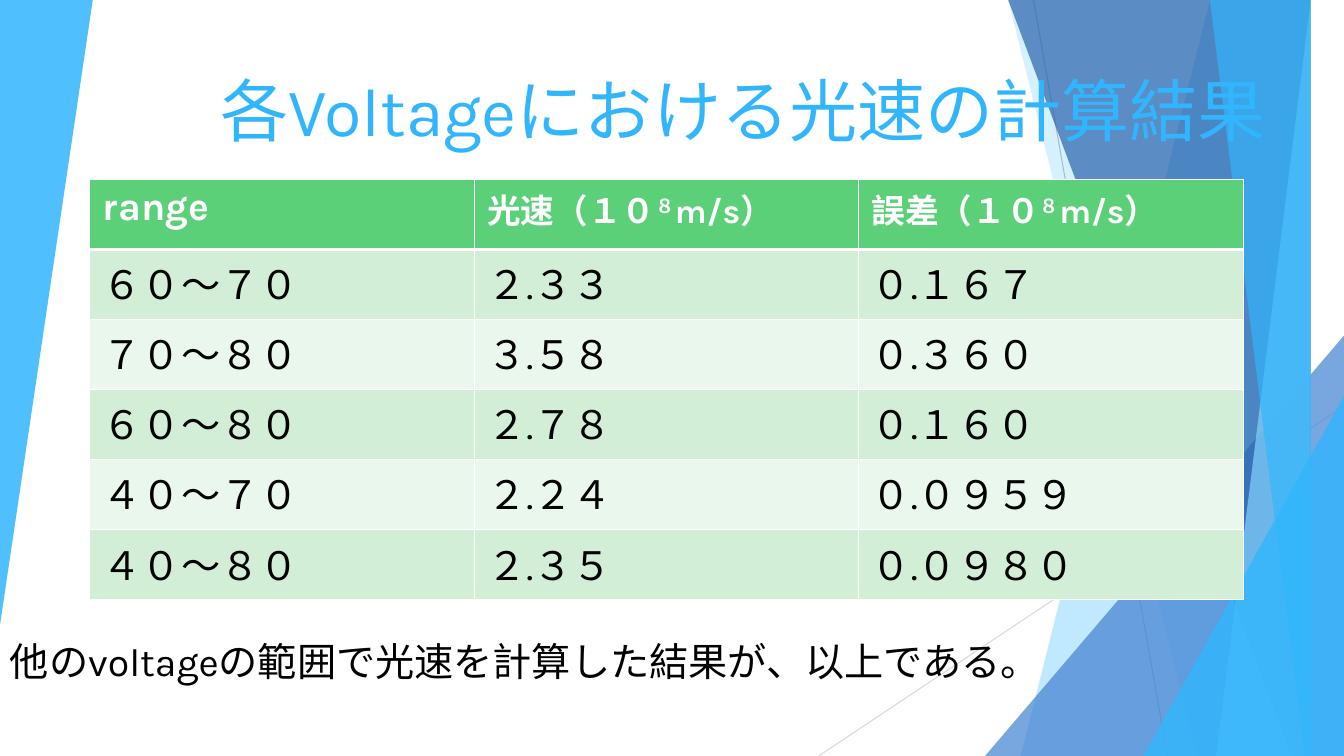
from lxml import etree
from pptx import Presentation
from pptx.dml.color import RGBColor
from pptx.enum.shapes import MSO_CONNECTOR, MSO_SHAPE
from pptx.enum.text import MSO_ANCHOR, PP_ALIGN
from pptx.oxml.ns import qn
from pptx.util import Inches, Pt

STRAIGHT = MSO_CONNECTOR.STRAIGHT
TRIANGLE = MSO_SHAPE.ISOSCELES_TRIANGLE
BOTTOM, TOP = MSO_ANCHOR.BOTTOM, MSO_ANCHOR.TOP
LEFT, RIGHT = PP_ALIGN.LEFT, PP_ALIGN.RIGHT
WIDTH, HEIGHT = 13.33, 7.5
SKY, BLUE, NAVY, PALE = "31B6FD", "4584D3", "2862AA", "83D3FE"
WHITE, BLACK, GREEN = "FFFFFF", "000000", "5BD078"
BANDS = ("D2EED6", "EAF7EC")


def rgb(value):
    """Turn a hex string into a colour."""
    return RGBColor.from_string(value)


class SlideBuilder:
    """Hold the style and the current slide."""

    font = "Karla"

    def __init__(self, prs):
        """Add a blank slide with a white background."""
        self.s = prs.slides.add_slide(prs.slide_layouts[6])
        self.s.background.fill.solid()
        self.s.background.fill.fore_color.rgb = rgb(WHITE)

    def line(self, x1, y1, x2, y2, color):
        """Draw a thin straight line."""
        c = self.s.shapes.add_connector(
            STRAIGHT, Inches(x1), Inches(y1), Inches(x2), Inches(y2))
        c.line.color.rgb = rgb(color)
        c.line.width = Pt(0.75)
        etree.SubElement(c._element.spPr, qn("a:effectLst"))

    def paint(self, sp, color, alpha):
        """Give a shape a translucent fill and no outline."""
        sp.shadow.inherit = False
        sp.line.fill.background()
        sp.fill.solid()
        sp.fill.fore_color.rgb = rgb(color)
        clr = sp._element.spPr.find(qn("a:solidFill"))[0]
        etree.SubElement(clr, qn("a:alpha"), val=str(alpha * 1000))

    def wedge(self, top_x, bottom_x, color, alpha):
        """Fill from a slanted edge to the right side of the slide."""
        fb = self.s.shapes.build_freeform(top_x, -0.01, scale=Inches(1))
        fb.add_line_segments(
            [(WIDTH, -0.01), (WIDTH, HEIGHT), (bottom_x, HEIGHT)], close=True)
        self.paint(fb.convert_to_shape(), color, alpha)

    def triangle(self, x, y, w, h, color, alpha, rotation=0):
        """Draw a right triangle with its apex over the right corner."""
        sp = self.s.shapes.add_shape(
            TRIANGLE, Inches(x), Inches(y), Inches(w), Inches(h))
        sp.adjustments[0] = 1
        sp.rotation = rotation
        self.paint(sp, color, alpha)

    def run(self, p, text, size, color, bold=False, baseline=0):
        """Add a formatted run to a paragraph."""
        r = p.add_run()
        r.text = text
        fmt = {"name": self.font, "size": Pt(size), "bold": bold}
        for key, value in fmt.items():
            setattr(r.font, key, value)
        r.font.color.rgb = rgb(color)
        if baseline:
            r._r.get_or_add_rPr().set("baseline", str(baseline * 1000))

    def text(self, x, y, w, h, text, size, color,
             align=LEFT, anchor=TOP, before=0):
        """Add a one-paragraph text box."""
        tf = self.s.shapes.add_textbox(
            Inches(x), Inches(y), Inches(w), Inches(h)).text_frame
        tf.word_wrap = True
        tf.vertical_anchor = anchor
        p = tf.paragraphs[0]
        p.alignment = align
        p.space_before = Pt(before)
        self.run(p, text, size, color)

    def cell(self, cell, fill, bottom=1):
        """Set margins, borders and fill, and return the paragraph."""
        margins = {"margin_left": 0.13, "margin_right": 0.13,
                   "margin_top": 0.05, "margin_bottom": 0.05}
        for key, value in margins.items():
            setattr(cell, key, Inches(value))
        tcPr = cell._tc.get_or_add_tcPr()
        for side, width in {"L": 1, "R": 1, "T": 1, "B": bottom}.items():
            ln = etree.SubElement(tcPr, qn(f"a:ln{side}"), w=str(Pt(width)))
            solid = etree.SubElement(ln, qn("a:solidFill"))
            etree.SubElement(solid, qn("a:srgbClr"), val=WHITE)
        cell.fill.solid()
        cell.fill.fore_color.rgb = rgb(fill)
        return cell.text_frame.paragraphs[0]

    def table(self, x, y, w, h, header, rows):
        """Add a banded table whose header cells are lists of runs."""
        table = self.s.shapes.add_table(
            len(rows) + 1, len(header),
            Inches(x), Inches(y), Inches(w), Inches(h)).table
        for j, runs in enumerate(header):
            p = self.cell(table.cell(0, j), GREEN, bottom=3)
            for text, size, baseline in runs:
                self.run(p, text, size, WHITE, True, baseline)
        for i, row in enumerate(rows):
            for j, text in enumerate(row):
                p = self.cell(table.cell(i + 1, j), BANDS[i % 2],)
                self.run(p, text, 28, BLACK)


def main():
    """Build the slide of light-speed results."""
    prs = Presentation()
    prs.slide_width, prs.slide_height = Inches(WIDTH), Inches(HEIGHT)
    b = SlideBuilder(prs)

    b.line(10.25, 0, 11.58, HEIGHT, "BFBFBF")
    b.line(WIDTH, 4.03, 8.12, HEIGHT, "D9D9D9")
    b.wedge(12.28, 10.04, SKY, 30)
    b.wedge(10.5, 11.83, SKY, 20)
    b.triangle(9.77, 3.33, 3.56, 4.17, BLUE, 72)
    b.wedge(10.21, 12.91, NAVY, 70)
    b.wedge(13.03, 11.92, PALE, 70)
    b.wedge(11.96, 13.18, SKY, 65)
    b.triangle(11.34, 3.93, 1.99, 3.57, SKY, 80)
    b.triangle(0, 0, 0.92, 6.2, SKY, 85, rotation=180)

    b.text(0.58, 0.6, 12.07, 0.94, "各Voltageにおける光速の計算結果",
           48.6, SKY, align=RIGHT, anchor=BOTTOM)
    b.text(0, 6.27, WIDTH, 0.86,
           "他のvoltageの範囲で光速を計算した結果が、以上である。",
           28, BLACK, before=10)

    header = [[("range", 28, 0)]]
    for name in ("光速", "誤差"):
        header.append([(f"{name}（１０", 24, 0), ("８", 24, 30), ("m/s）", 24, 0)])
    rows = [
        ("６０〜７０", "２.３３", "０.１６７"),
        ("７０〜８０", "３.５８", "０.３６０"),
        ("６０〜８０", "２.７８", "０.１６０"),
        ("４０〜７０", "２.２４", "０.０９５９"),
        ("４０〜８０", "２.３５", "０.０９８０"),
    ]
    b.table(0.89, 1.78, 11.44, 4.17, header, rows)
    prs.save("out.pptx")


if __name__ == "__main__":
    main()
